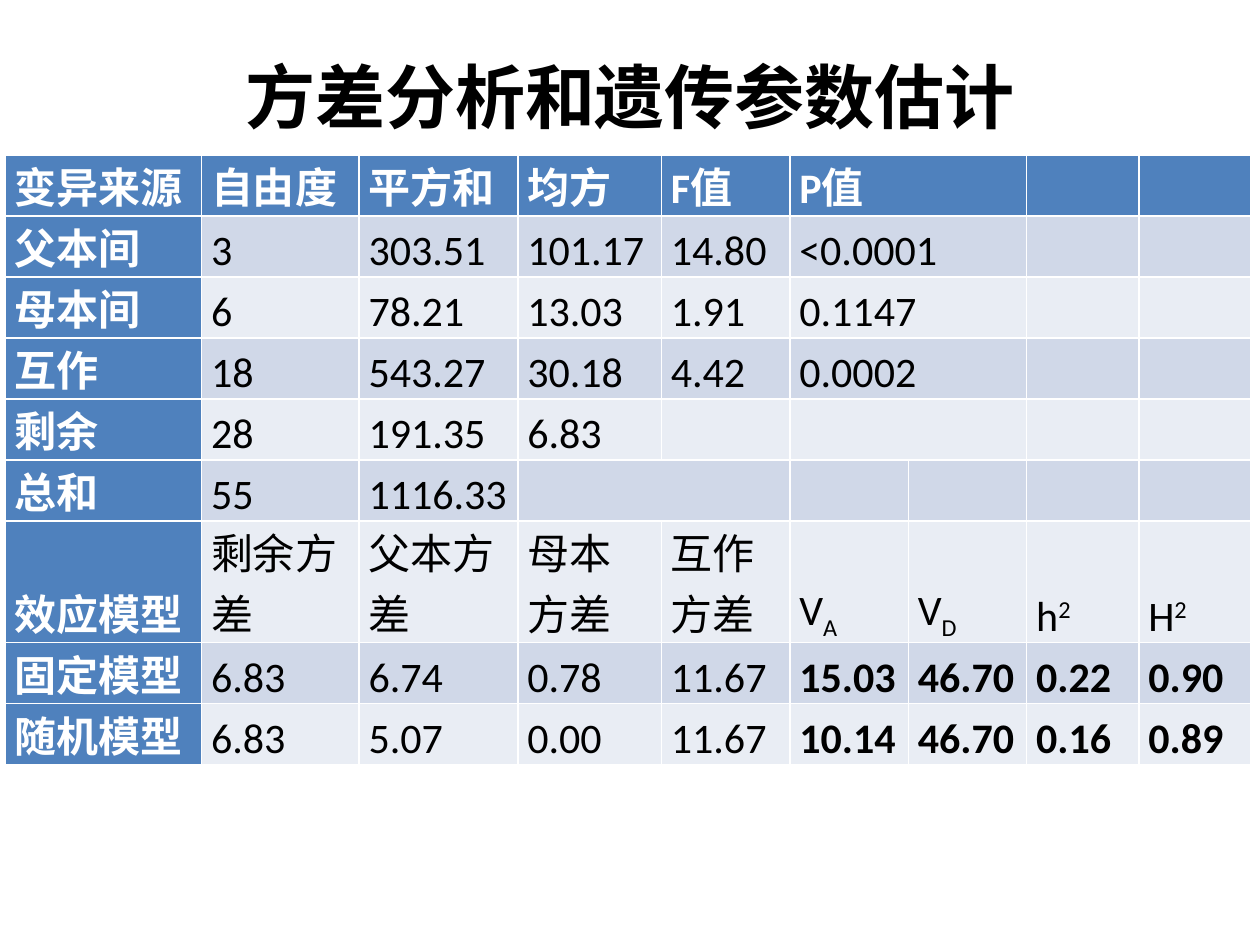
"""Build a slide with an analysis of variance table and genetic parameter estimates."""
from dataclasses import dataclass

import pptx
import pptx.dml.color
import pptx.enum.text
import pptx.presentation
import pptx.slide
import pptx.table
import pptx.util

Inches = pptx.util.Inches
Pt = pptx.util.Pt
RGBColor = pptx.dml.color.RGBColor
Align = pptx.enum.text.PP_ALIGN
Anchor = pptx.enum.text.MSO_ANCHOR

BLACK = RGBColor(0x00, 0x00, 0x00)
WHITE = RGBColor(0xFF, 0xFF, 0xFF)
HEADING_BLUE = RGBColor(0x4F, 0x81, 0xBD)
BAND_DARK = RGBColor(0xD0, 0xD8, 0xE8)
BAND_LIGHT = RGBColor(0xE9, 0xED, 0xF4)

COLUMN_WIDTHS = (1.56, 1.25, 1.26, 1.14, 1.02, 0.94, 0.94, 0.89, 0.89)
LINE_HEIGHT = 0.48
SUBSCRIPT = -25000
SUPERSCRIPT = 30000


@dataclass(frozen=True)
class Symbol:
    """A letter with a raised or lowered index."""

    letter: str
    index: str
    baseline: int


@dataclass(frozen=True)
class TableRow:
    """One table row, with the columns it merges and where bold values start."""

    entries: tuple[str | Symbol, ...]
    merged: tuple[int, int] | None = None
    bold_from: int = len(COLUMN_WIDTHS)
    lines: int = 1


P_VALUE = (5, 6)
ROWS = (
    TableRow(("变异来源", "自由度", "平方和", "均方", "F值", "P值"), P_VALUE),
    TableRow(("父本间", "3", "303.51", "101.17", "14.80", "<0.0001"), P_VALUE),
    TableRow(("母本间", "6", "78.21", "13.03", "1.91", "0.1147"), P_VALUE),
    TableRow(("互作", "18", "543.27", "30.18", "4.42", "0.0002"), P_VALUE),
    TableRow(("剩余", "28", "191.35", "6.83"), P_VALUE),
    TableRow(("总和", "55", "1116.33"), (3, 4)),
    TableRow(
        ("效应模型", "剩余方差", "父本方差", "母本方差", "互作方差",
         Symbol("V", "A", SUBSCRIPT), Symbol("V", "D", SUBSCRIPT),
         Symbol("h", "2", SUPERSCRIPT), Symbol("H", "2", SUPERSCRIPT)),
        lines=2,
    ),
    TableRow(("固定模型", "6.83", "6.74", "0.78", "11.67",
              "15.03", "46.70", "0.22", "0.90"), bold_from=5),
    TableRow(("随机模型", "6.83", "5.07", "0.00", "11.67",
              "10.14", "46.70", "0.16", "0.89"), bold_from=5),
)


def write_entry(cell: pptx.table._Cell, entry: str | Symbol,
                color: RGBColor, bold: bool) -> None:
    """Write a value or an indexed symbol into a cell."""
    cell.margin_left = cell.margin_right = Pt(5.4)
    cell.margin_top = cell.margin_bottom = Inches(0)
    cell.vertical_anchor = Anchor.BOTTOM
    paragraph = cell.text_frame.paragraphs[0]
    if isinstance(entry, Symbol):
        paragraph.text = entry.letter
        index = paragraph.add_run()
        index.text = entry.index
        index.font._element.set("baseline", str(entry.baseline))
    else:
        paragraph.text = entry
    for run in paragraph.runs:
        run.font.name = "Calibri"
        run.font.size = Pt(24)
        run.font.bold = bold
        run.font.color.rgb = color


def fill_row(table: pptx.table.Table, number: int, row: TableRow) -> None:
    """Merge, colour and write the cells of one row."""
    table.rows[number].height = Inches(LINE_HEIGHT * row.lines)
    if row.merged:
        first, last = row.merged
        table.cell(number, first).merge(table.cell(number, last))
    band = BAND_DARK if number % 2 else BAND_LIGHT
    for column in range(len(COLUMN_WIDTHS)):
        cell = table.cell(number, column)
        heading = number == 0 or column == 0
        cell.fill.solid()
        cell.fill.fore_color.rgb = HEADING_BLUE if heading else band
        if column < len(row.entries):
            write_entry(cell, row.entries[column], WHITE if heading else BLACK,
                        heading or column >= row.bold_from)
        if number == 0:
            cell.text_frame.paragraphs[0].alignment = Align.JUSTIFY


def add_title(slide: pptx.slide.Slide) -> None:
    """Place and format the slide title."""
    title = slide.shapes.title
    title.left, title.top = Inches(0.5), Inches(0.36)
    title.width, title.height = Inches(9), Inches(0.79)
    title.text_frame.text = "方差分析和遗传参数估计"
    title.text_frame.vertical_anchor = Anchor.MIDDLE
    heading = title.text_frame.paragraphs[0]
    heading.alignment = Align.CENTER
    font = heading.runs[0].font
    font.name = "Times New Roman"
    font.size = Pt(40)
    font.bold = True
    font.color.rgb = BLACK


def add_variance_table(slide: pptx.slide.Slide) -> None:
    """Add the variance table with its column widths and rows."""
    line_count = sum(row.lines for row in ROWS)
    table = slide.shapes.add_table(
        len(ROWS), len(COLUMN_WIDTHS), Inches(0.04), Inches(1.23),
        Inches(sum(COLUMN_WIDTHS)), Inches(LINE_HEIGHT * line_count),
    ).table
    table.first_col = True
    for column, width in zip(table.columns, COLUMN_WIDTHS):
        column.width = Inches(width)
    for number, row in enumerate(ROWS):
        fill_row(table, number, row)
    table.cell(6, 4).vertical_anchor = Anchor.TOP


def main() -> None:
    """Create and save the presentation."""
    presentation = pptx.Presentation()
    presentation.slide_width = Inches(10)
    presentation.slide_height = Inches(7.5)
    slide = presentation.slides.add_slide(presentation.slide_layouts[5])
    add_title(slide)
    add_variance_table(slide)
    presentation.save("out.pptx")


if __name__ == "__main__":
    main()
